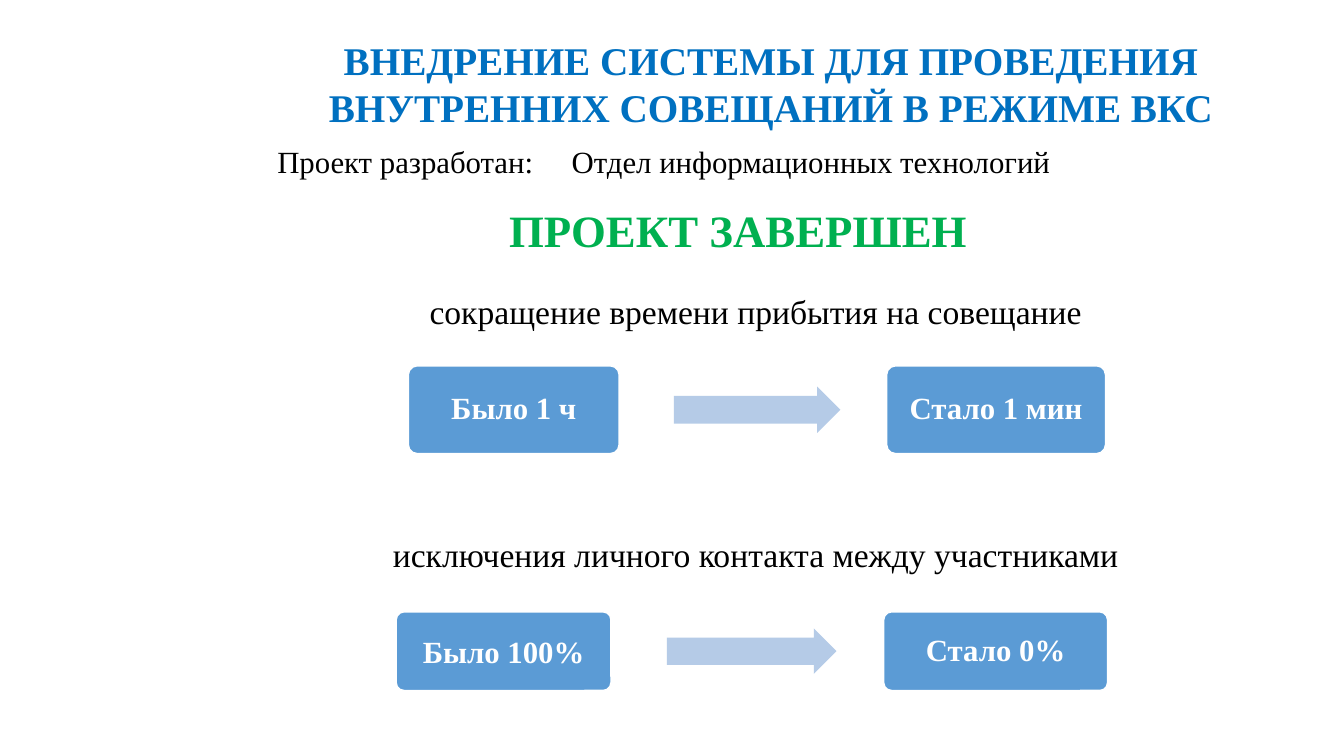
import pptx
import pptx.dml.color
import pptx.enum.shapes
import pptx.enum.text
import pptx.oxml.ns
import pptx.util
from lxml import etree
from dataclasses import dataclass

Inches = pptx.util.Inches
Pt = pptx.util.Pt
Align = pptx.enum.text.PP_ALIGN
Anchor = pptx.enum.text.MSO_ANCHOR
Preset = pptx.enum.shapes.MSO_SHAPE


@dataclass(frozen=True)
class Theme:
    font: str = "Times New Roman"
    title: str = "0070C0"
    status: str = "00B050"
    text: str = "000000"
    card: str = "5B9BD5"
    arrow: str = "B5CBE7"
    white: str = "FFFFFF"
    title_size: int = 28
    status_size: int = 32
    caption_size: int = 24
    small_size: int = 22


THEME = Theme()


def rgb(value):
    return pptx.dml.color.RGBColor.from_string(value)


def set_all(target, values):
    for name, value in values.items():
        setattr(target, name, value)


def place(shape, box):
    names = ("left", "top", "width", "height")
    set_all(shape, {name: Inches(value) for name, value in zip(names, box)})


def write(para, text, size, color, bold=False, **layout):
    set_all(para, {"alignment": Align.CENTER, "space_before": Pt(0), **layout})
    span = para.add_run()
    span.text = text
    set_all(span.font, {"name": THEME.font, "size": Pt(size), "bold": bold})
    span.font.color.rgb = rgb(color)


def plain_frame(shape, anchor=Anchor.TOP, wrap=True):
    frame = shape.text_frame
    set_all(frame, {
        "auto_size": pptx.enum.text.MSO_AUTO_SIZE.NONE,
        "word_wrap": wrap,
        "vertical_anchor": anchor,
    })
    return frame


def clear_bullet(para, first_indent=0, tab=None):
    props = para._p.get_or_add_pPr()
    props.set("marL", "0")
    props.set("indent", str(Inches(first_indent)))
    etree.SubElement(props, pptx.oxml.ns.qn("a:buNone"))
    if tab:
        stops = etree.SubElement(props, pptx.oxml.ns.qn("a:tabLst"))
        etree.SubElement(stops, pptx.oxml.ns.qn("a:tab"),
                         pos=str(Inches(tab)), algn="l")


def add_title(page, box, text):
    title = page.shapes.title
    place(title, box)
    write(plain_frame(title).paragraphs[0], text,
          THEME.title_size, THEME.title, bold=True)


def add_body(page, box, author, captions):
    body = page.placeholders[1]
    place(body, box)
    frame = plain_frame(body)
    para = frame.paragraphs[0]
    clear_bullet(para, first_indent=0.08, tab=4.9)
    write(para, author, THEME.small_size, THEME.text, alignment=Align.LEFT)
    for text, gap in captions:
        para = frame.add_paragraph()
        clear_bullet(para)
        write(para, text, THEME.caption_size, THEME.text, space_before=Pt(gap))


def add_status(page, box, text):
    status = page.shapes.add_textbox(*map(Inches, box))
    write(plain_frame(status, wrap=False).paragraphs[0], text,
          THEME.status_size, THEME.status, bold=True)


def add_block(page, preset, box, fill, adjustments):
    block = page.shapes.add_shape(preset, *map(Inches, box))
    block.shadow.inherit = False
    block.fill.solid()
    block.fill.fore_color.rgb = rgb(fill)
    block.line.fill.background()
    for index, value in enumerate(adjustments):
        block.adjustments[index] = value
    return block


def add_card(page, box, text, line_spacing):
    card = add_block(page, Preset.ROUNDED_RECTANGLE, box, THEME.card, [0.1])
    card.line.color.rgb = rgb(THEME.white)
    card.line.width = Pt(1)
    write(plain_frame(card, Anchor.MIDDLE).paragraphs[0], text,
          THEME.small_size, THEME.white, bold=True, line_spacing=line_spacing)


def add_comparison(page, box, after_width, arrow_height, before, after):
    """The box is that of the first card; the rest follows from its width."""
    left, top, width, height = box
    right = left + width
    add_card(page, box, *before)
    add_block(page, Preset.RIGHT_ARROW,
              (right + 0.26 * width, top + (height - arrow_height) / 2,
               0.79 * width, arrow_height),
              THEME.arrow, [0.6, 0.5])
    add_card(page, (right + 1.27 * width, top, after_width, height), *after)


def main():
    deck = pptx.Presentation()
    deck.slide_width, deck.slide_height = Inches(13.33), Inches(7.5)
    page = deck.slides.add_slide(deck.slide_layouts[1])

    # Heading, author and captions
    add_title(page, (1.96, 0.31, 11.37, 1.04),
              "ВНЕДРЕНИЕ СИСТЕМЫ ДЛЯ ПРОВЕДЕНИЯ ВНУТРЕННИХ СОВЕЩАНИЙ В РЕЖИМЕ ВКС")
    add_body(page, (2.57, 1.37, 9.85, 5.76),
             "Проект разработан:\tОтдел информационных технологий",
             [("сокращение времени прибытия на совещание", 79),
              ("исключения личного контакта между участниками", 145)])

    # Before and after
    add_comparison(page, (4.05, 3.63, 2.09, 0.87), 2.17, 0.46,
                   ("Было 1 ч", 0.9), ("Стало 1 мин", 0.9))
    add_comparison(page, (3.93, 6.07, 2.13, 0.78), 2.22, 0.45,
                   ("Было 100%", 1.0), ("Стало 0%", 0.9))

    # Project status
    add_status(page, (4.93, 1.96, 4.78, 0.64), "ПРОЕКТ ЗАВЕРШЕН")

    deck.save("out.pptx")


if __name__ == "__main__":
    main()
